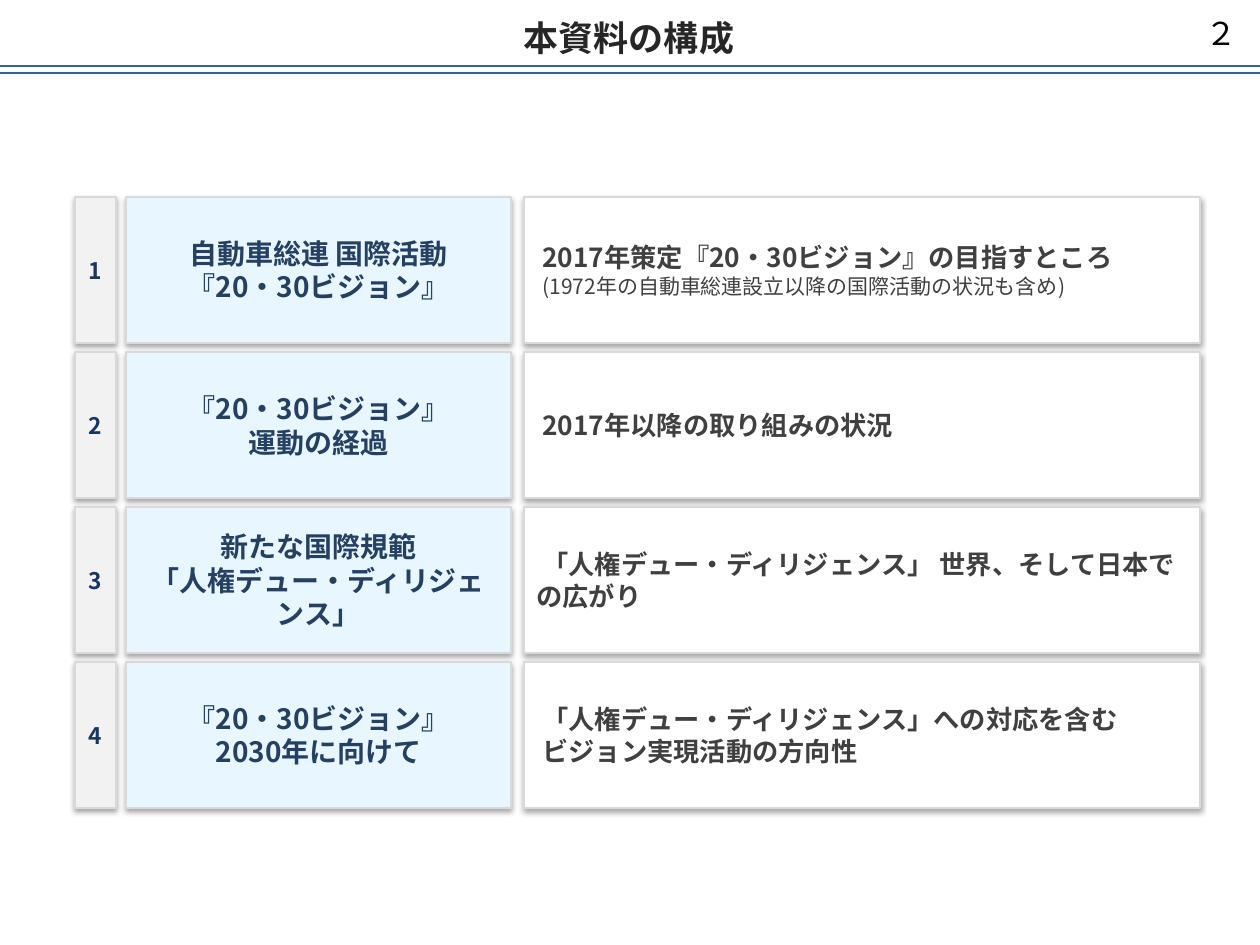
from dataclasses import dataclass

from lxml.etree import SubElement as Sub
from pptx import Presentation
from pptx.dml.color import RGBColor as Rgb
from pptx.enum.shapes import MSO_CONNECTOR as Link, MSO_SHAPE as Kind
from pptx.enum.text import MSO_ANCHOR as Anchor, MSO_AUTO_SIZE as Fit, PP_ALIGN as Align
from pptx.oxml.ns import qn
from pptx.util import Emu, Pt

SCALE = 914400 / 126


def px(n: int) -> Emu:
    return Emu(round(n * SCALE))


@dataclass(frozen=True)
class Style:
    size: int
    color: str
    bold: bool = True
    align: Align = Align.CENTER
    font: str = "Noto Sans CJK JP"
    indent: int = 0


@dataclass(frozen=True)
class Theme:
    white: str = "FFFFFF"
    edge: str = "D9D9D9"
    rule: str = "376092"
    title: Style = Style(20, "262626")
    page: Style = Style(18, "000000", False, font="Calibri")
    num: Style = Style(13, "17375E")
    topic: Style = Style(16, "254061")
    body: Style = Style(15, "404040", align=Align.LEFT, indent=6)
    note: Style = Style(12, "404040", False, Align.LEFT, indent=6)


@dataclass(frozen=True)
class Col:
    left: int
    width: int
    fill: str


@dataclass(frozen=True)
class Row:
    topic: list[str]
    body: list[str]
    note: str = ""


THEME = Theme()
TOP, HIGH, STEP = 197, 146, 155
NUM = Col(75, 41, "F2F2F2")
TOPIC = Col(126, 385, "E7F6FF")
BODY = Col(524, 676, THEME.white)
ROWS = [
    Row(["自動車総連 国際活動", "『20・30ビジョン』"],
        ["2017年策定『20・30ビジョン』の目指すところ"],
        "(1972年の自動車総連設立以降の国際活動の状況も含め)"),
    Row(["『20・30ビジョン』", "運動の経過"], ["2017年以降の取り組みの状況"]),
    Row(["新たな国際規範", "「人権デュー・ディリジェンス」"],
        ["「人権デュー・ディリジェンス」 世界、そして日本での広がり"]),
    Row(["『20・30ビジョン』", "2030年に向けて"],
        ["「人権デュー・ディリジェンス」への対応を含む", "ビジョン実現活動の方向性"]),
]


def write(frame, lines: list[tuple[str, Style]]) -> None:
    frame.word_wrap = True
    frame.auto_size = Fit.NONE
    frame.vertical_anchor = Anchor.MIDDLE
    for i, (text, style) in enumerate(lines):
        para = frame.add_paragraph() if i else frame.paragraphs[0]
        para.text = text
        para.alignment = style.align
        font = para.font
        font.name, font.size, font.bold = style.font, Pt(style.size), style.bold
        font.color.rgb = Rgb.from_string(style.color)
        props = para._p.get_or_add_pPr()
        if style.indent:
            props.set("indent", str(px(style.indent)))
        Sub(props.find(qn("a:defRPr")), qn("a:ea"), typeface=style.font)


def shade(shape) -> None:
    effects = shape.element.spPr.find(qn("a:effectLst"))
    outer = Sub(effects, qn("a:outerShdw"), blurRad="40000", dist="23000",
                dir="5400000", rotWithShape="0")
    Sub(Sub(outer, qn("a:srgbClr"), val="000000"), qn("a:alpha"), val="35000")


def block(slide, box: tuple[int, int, int, int], fill: str, edge: str, weight: float):
    shape = slide.shapes.add_shape(Kind.RECTANGLE, *map(px, box))
    shape.shadow.inherit = False
    shape.fill.solid()
    shape.fill.fore_color.rgb = Rgb.from_string(fill)
    shape.line.color.rgb = Rgb.from_string(edge)
    shape.line.width = Pt(weight)
    return shape


def cell(slide, col: Col, top: int, lines: list[tuple[str, Style]]) -> None:
    shape = block(slide, (col.left, top, col.width, HIGH), col.fill, THEME.edge, 0.75)
    shade(shape)
    write(shape.text_frame, lines)


def rule(slide, y: int, weight: float):
    line = slide.shapes.add_connector(Link.STRAIGHT, px(-2), px(y), px(1260), px(y))
    line.line.color.rgb = Rgb.from_string(THEME.rule)
    line.line.width = Pt(weight)
    Sub(line.element.spPr, qn("a:effectLst"))
    return line


def head(slide) -> None:
    block(slide, (0, 0, 1260, 66), THEME.white, THEME.white, 2)
    rule(slide, 66, 1.5)
    last = rule(slide, 73, 0.75)
    title = slide.shapes.title
    title.left, title.top, title.width, title.height = map(px, (-2, 10, 1262, 55))
    write(title.text_frame, [("本資料の構成", THEME.title)])
    last.element.addnext(title.element)


def main() -> None:
    deck = Presentation()
    deck.slide_width, deck.slide_height = px(1260), px(945)
    slide = deck.slides.add_slide(deck.slide_layouts[5])
    head(slide)
    for i, row in enumerate(ROWS):
        top = TOP + i * STEP
        cell(slide, NUM, top, [(str(i + 1), THEME.num)])
        cell(slide, TOPIC, top, [(text, THEME.topic) for text in row.topic])
        lines = [(text, THEME.body) for text in row.body]
        if row.note:
            lines.append((row.note, THEME.note))
        cell(slide, BODY, top, lines)
    page = slide.shapes.add_textbox(*map(px, (1182, 0, 78, 66)))
    write(page.text_frame, [("２", THEME.page)])
    deck.save("out.pptx")


if __name__ == "__main__":
    main()
